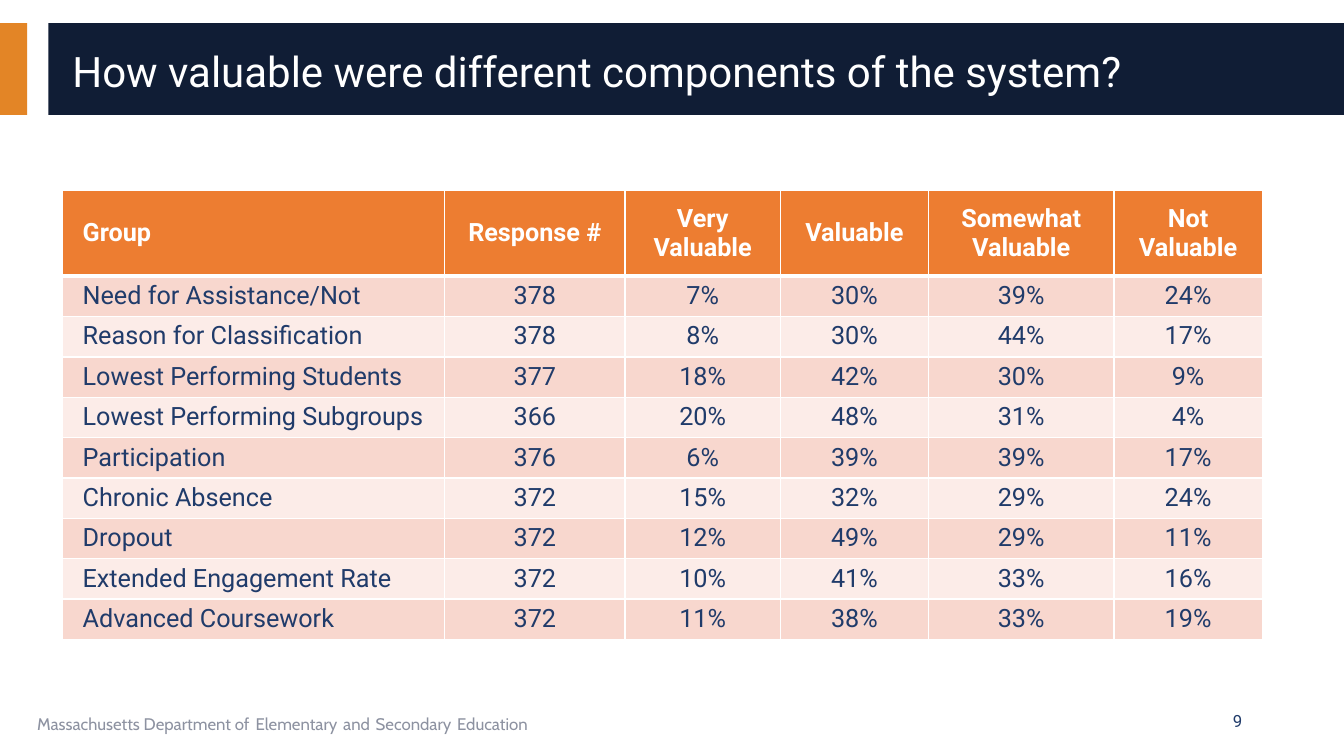
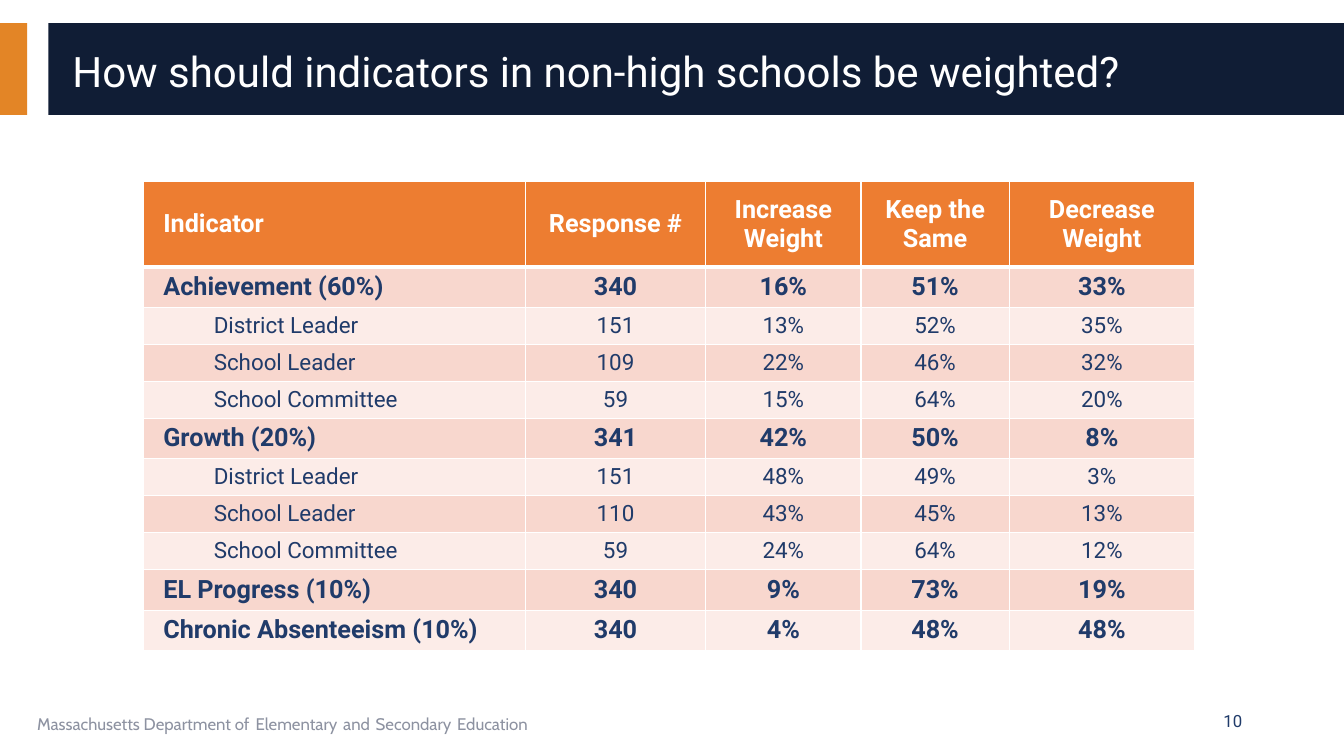
from dataclasses import dataclass

from lxml.etree import SubElement
from pptx import Presentation
from pptx.dml.color import RGBColor
from pptx.enum.shapes import MSO_SHAPE
from pptx.enum.text import MSO_ANCHOR, PP_ALIGN
from pptx.oxml.ns import qn
from pptx.util import Inches, Pt


@dataclass(frozen=True)
class Theme:
    """Colours, fonts and type sizes of the deck."""

    navy: str = "101D35"
    amber: str = "E38526"
    header: str = "ED7D31"
    bands: tuple = ("F8D7CE", "FCECE8")
    ink: str = "203B6A"
    muted: str = "8D92A1"
    white: str = "FFFFFF"
    body_font: str = "Roboto"
    footer_font: str = "Cabin"
    title_size: int = 30
    table_size: int = 18
    detail_size: int = 16
    footer_size: int = 12
    rule: int = 1
    header_rule: int = 3


@dataclass(frozen=True)
class RowStyle:
    """Look of one kind of table row."""

    size: int
    height: float
    color: str
    bold: bool = False
    indent: float = 0
    anchor: MSO_ANCHOR = MSO_ANCHOR.TOP


THEME = Theme()
HEADER = RowStyle(THEME.table_size, 0.85, THEME.white, bold=True, anchor=MSO_ANCHOR.MIDDLE)
PLAIN = RowStyle(THEME.table_size, 0.4, THEME.ink)
GROUP = RowStyle(THEME.table_size, 0.4, THEME.ink, bold=True)
DETAIL = RowStyle(THEME.detail_size, 0.36, THEME.ink, indent=0.5)

AGENCY_WORDS = ("Massachusetts Department of", "Elementary", "and", "Secondary", "Education")
COLUMN_WIDTHS = (3.79, 1.79, 1.54, 1.47, 1.84, 1.47)

COMPONENT_HEADS = ("Group", "Response #", "Very\nValuable", "Valuable",
                   "Somewhat\nValuable", "Not\nValuable")
COMPONENT_ROWS = (
    (PLAIN, "Need for Assistance/Not", 378, 7, 30, 39, 24),
    (PLAIN, "Reason for Classification", 378, 8, 30, 44, 17),
    (PLAIN, "Lowest Performing Students", 377, 18, 42, 30, 9),
    (PLAIN, "Lowest Performing Subgroups", 366, 20, 48, 31, 4),
    (PLAIN, "Participation", 376, 6, 39, 39, 17),
    (PLAIN, "Chronic Absence", 372, 15, 32, 29, 24),
    (PLAIN, "Dropout", 372, 12, 49, 29, 11),
    (PLAIN, "Extended Engagement Rate", 372, 10, 41, 33, 16),
    (PLAIN, "Advanced Coursework", 372, 11, 38, 33, 19),
)
WEIGHT_HEADS = ("Indicator", "Response #", "Increase\nWeight", "Keep the Same", "Decrease Weight")
WEIGHT_ROWS = (
    (GROUP, "Achievement (60%)", 340, 16, 51, 33),
    (DETAIL, "District Leader", 151, 13, 52, 35),
    (DETAIL, "School Leader", 109, 22, 46, 32),
    (DETAIL, "School Committee", 59, 15, 64, 20),
    (GROUP, "Growth (20%)", 341, 42, 50, 8),
    (DETAIL, "District Leader", 151, 48, 49, 3),
    (DETAIL, "School Leader", 110, 43, 45, 13),
    (DETAIL, "School Committee", 59, 24, 64, 12),
    (GROUP, "EL Progress (10%)", 340, 9, 73, 19),
    (GROUP, "Chronic Absenteeism (10%)", 340, 4, 48, 48),
)


def add_run(paragraph, text, size, color, font=THEME.body_font, bold=False):
    """Append one styled run to a paragraph."""
    run = paragraph.add_run()
    run.text = text
    run.font.name = font
    run.font.size = Pt(size)
    run.font.bold = bold
    run.font.color.rgb = RGBColor.from_string(color)


def add_band(slide, box, color):
    """Draw a plain filled rectangle."""
    band = slide.shapes.add_shape(MSO_SHAPE.RECTANGLE, *map(Inches, box))
    band.shadow.inherit = False
    band.fill.solid()
    band.fill.fore_color.rgb = RGBColor.from_string(color)
    band.line.fill.background()


def add_line_box(slide, box, anchor=MSO_ANCHOR.MIDDLE):
    """Add a wrapping text box and return its first paragraph."""
    frame = slide.shapes.add_textbox(*map(Inches, box)).text_frame
    frame.word_wrap = True
    frame.vertical_anchor = anchor
    return frame.paragraphs[0]


def add_title(slide, title, left, top, width, height):
    """Place the amber tab, the navy band and the title over it."""
    add_band(slide, (0, top, 0.27, height), THEME.amber)
    add_band(slide, (left, top, width, height), THEME.navy)
    heading = add_line_box(slide, (left + 0.14, top + 0.09, width - 0.41, height - 0.09))
    heading.line_spacing = 0.9
    add_run(heading, title, THEME.title_size, THEME.white)


def add_footer(slide, number, left, top, width, height):
    """Place the agency name at the left and the page number at the right."""
    agency = add_line_box(slide, (left, top, 8.44, height), MSO_ANCHOR.TOP)
    for index, word in enumerate(AGENCY_WORDS):
        if index:
            add_run(agency, " ", THEME.table_size, THEME.ink, THEME.footer_font)
        add_run(agency, word, THEME.footer_size, THEME.muted, THEME.footer_font)
    page = add_line_box(slide, (left + width - 3, top, 3, height))
    page.alignment = PP_ALIGN.RIGHT
    add_run(page, str(number), THEME.footer_size, THEME.ink)


def set_borders(cell, bottom, top):
    """Give a cell white rules on its four sides."""
    properties = cell._tc.get_or_add_tcPr()
    widths = {"a:lnL": THEME.rule, "a:lnR": THEME.rule, "a:lnT": top, "a:lnB": bottom}
    for tag, width in widths.items():
        line = SubElement(properties, qn(tag), w=str(Pt(width)))
        SubElement(SubElement(line, qn("a:solidFill")), qn("a:srgbClr"), val=THEME.white)


def fill_cell(cell, text, style, color, is_label):
    """Write and format one table cell."""
    cell.fill.solid()
    cell.fill.fore_color.rgb = RGBColor.from_string(color)
    cell.margin_left = cell.margin_right = Inches(0.2)
    cell.margin_top = cell.margin_bottom = Inches(0.05)
    cell.vertical_anchor = style.anchor
    for index, line in enumerate(text.split("\n")):
        frame = cell.text_frame
        paragraph = frame.add_paragraph() if index else frame.paragraphs[0]
        if not is_label:
            paragraph.alignment = PP_ALIGN.CENTER
        elif style.indent:
            paragraph.level = 1
            indent = paragraph._p.get_or_add_pPr()
            indent.set("marL", str(Inches(style.indent)))
            indent.set("indent", "0")
        add_run(paragraph, line, style.size, style.color, bold=style.bold)


def add_survey_table(slide, heads, results, left, top):
    """Build a survey table whose corner sits at left, top."""
    rows = [(HEADER, heads)]
    for style, label, responses, *shares in results:
        rows.append((style, (label, str(responses), *(f"{share}%" for share in shares))))
    widths = COLUMN_WIDTHS[:len(heads)]
    height = sum(style.height for style, _ in rows)
    table = slide.shapes.add_table(len(rows), len(heads), Inches(left), Inches(top),
                                   Inches(sum(widths)), Inches(height)).table
    table.horz_banding = False
    for column, width in zip(table.columns, widths):
        column.width = Inches(width)
    for row_index, (style, texts) in enumerate(rows):
        table.rows[row_index].height = Inches(style.height)
        color = THEME.bands[(row_index - 1) % 2] if row_index else THEME.header
        bottom = THEME.rule if row_index else THEME.header_rule
        top_rule = THEME.header_rule if row_index == 1 else THEME.rule
        for column_index, text in enumerate(texts):
            cell = table.cell(row_index, column_index)
            set_borders(cell, bottom, top_rule)
            fill_cell(cell, text, style, color, column_index == 0)


def add_survey_slide(deck, number, title, heads, results, corner):
    """Add one slide with title, survey table and footer."""
    slide = deck.slides.add_slide(deck.slide_layouts[6])
    add_title(slide, title, 0.48, 0.23, 12.85, 0.91)
    add_survey_table(slide, heads, results, *corner)
    add_footer(slide, number, 0.27, 6.95, 12.15, 0.4)


def main():
    """Build and save the deck."""
    deck = Presentation()
    deck.slide_width, deck.slide_height = Inches(13.33), Inches(7.5)
    add_survey_slide(deck, 9, "How valuable were different components of the system?",
                     COMPONENT_HEADS, COMPONENT_ROWS, (0.62, 1.89))
    add_survey_slide(deck, 10, "How should indicators in non-high schools be weighted?",
                     WEIGHT_HEADS, WEIGHT_ROWS, (1.42, 1.8))
    deck.save("out.pptx")


if __name__ == "__main__":
    main()
